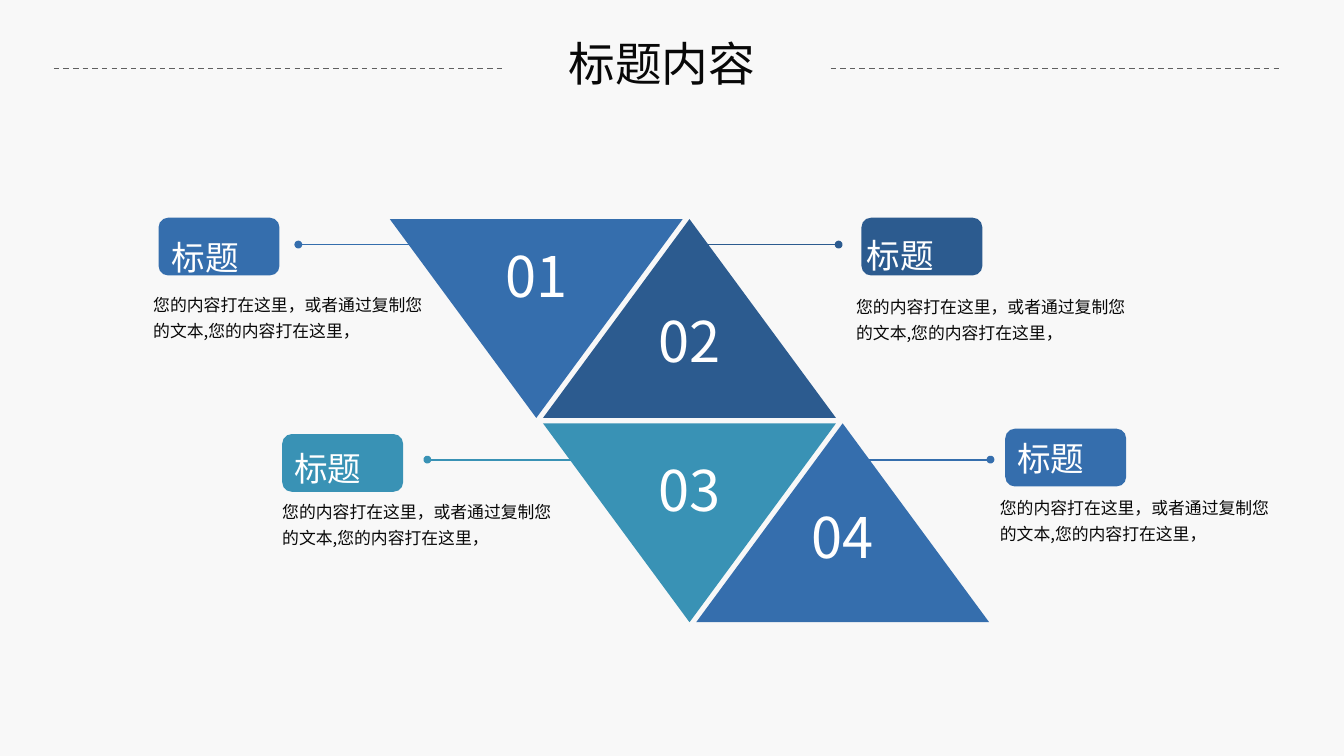
from lxml import etree
from pptx import Presentation
from pptx.dml.color import RGBColor
from pptx.enum import dml, shapes, text
from pptx.oxml.ns import qn
from pptx.util import Inches, Pt

THEME = {
    "font": "Noto Sans CJK SC",
    "background": "F8F8F8", "ink": "080808", "white": "FFFFFF", "rule": "5F5F5F",
    "blue": "356EAD", "navy": "2C5B8F", "teal": "3992B5", "dot": "0070C0",
    "title_size": 25, "number_size": 30, "heading_size": 18, "body_size": 9,
}

TITLE = "标题内容"
HEADING = "标题"
BODY = "您的内容打在这里，或者通过复制您的文本,您的内容打在这里，"
RULE_STARTS = [6.18, 0.4]

# Positions are (left, top); a leader runs from its dot to its triangle.
ITEMS = [
    {"number": "01", "color": "blue", "column": 0, "row": 0, "number_top": 1.75,
     "leader": (2.22, 3.35), "badge": (1.18, 1.62), "heading": (1.21, 1.61), "body": (1.07, 2.11)},
    {"number": "02", "color": "navy", "column": 1, "row": 0, "number_top": 2.23,
     "leader": (6.24, 5.11), "badge": (6.41, 1.62), "heading": (6.38, 1.6), "body": (6.3, 2.12)},
    {"number": "03", "color": "teal", "column": 1, "row": 1, "number_top": 3.34,
     "leader": (3.18, 4.31), "badge": (2.1, 3.23), "heading": (2.12, 3.18), "body": (2.03, 3.65)},
    {"number": "04", "color": "blue", "column": 2, "row": 1, "number_top": 3.69,
     "leader": (7.37, 6.25), "badge": (7.48, 3.19), "heading": (7.5, 3.11), "body": (7.37, 3.62)},
]

GRID_LEFT, GRID_TOP = 2.9, 1.63
COLUMN_STEP, ROW_STEP = 1.14, 1.52
TRIANGLE_WIDTH, TRIANGLE_HEIGHT = 2.18, 1.48
LEADER_TOP, LEADER_STEP = 1.82, 1.6
DOT = 0.03


def color(name):
    return RGBColor.from_string(THEME[name])


def add_text(slide, words, box, style, ink="ink", align=text.PP_ALIGN.LEFT,
             spacing=None, insets=(0.1, 0.05), wrap=True):
    shape = slide.shapes.add_textbox(*map(Inches, box))
    frame = shape.text_frame
    frame.word_wrap = wrap
    frame.auto_size = text.MSO_AUTO_SIZE.SHAPE_TO_FIT_TEXT
    frame.margin_left = frame.margin_right = Inches(insets[0])
    frame.margin_top = frame.margin_bottom = Inches(insets[1])
    paragraph = frame.paragraphs[0]
    paragraph.text = words
    paragraph.alignment = align
    paragraph.line_spacing = spacing
    font = paragraph.font
    font.size = Pt(THEME[style + "_size"])
    font.color.rgb = color(ink)
    font.name = THEME["font"]
    defaults = paragraph._p.pPr.find(qn("a:defRPr"))
    etree.SubElement(defaults, qn("a:ea"), typeface=THEME["font"])


def add_line(slide, start, end, top, ink, width):
    line = slide.shapes.add_connector(
        shapes.MSO_CONNECTOR.STRAIGHT, Inches(start), Inches(top), Inches(end), Inches(top))
    line.line.color.rgb = color(ink)
    line.line.width = Pt(width)
    etree.SubElement(line._element.spPr, qn("a:effectLst"))
    return line


def add_filled(slide, kind, box, fill):
    shape = slide.shapes.add_shape(kind, *map(Inches, box))
    shape.shadow.inherit = False
    shape.fill.solid()
    shape.fill.fore_color.rgb = color(fill)
    shape.line.fill.background()
    return shape


def add_leader(slide, item):
    start, end = item["leader"]
    top = LEADER_TOP + item["row"] * LEADER_STEP
    add_line(slide, start, end, top, item["color"], 1)
    dot = add_filled(slide, shapes.MSO_SHAPE.OVAL,
                     (start - DOT / 2, top - DOT / 2, DOT, DOT), "dot")
    dot.line.color.rgb = color(item["color"])
    dot.line.width = Pt(2)


def add_triangle(slide, item):
    left = GRID_LEFT + item["column"] * COLUMN_STEP
    top = GRID_TOP + item["row"] * ROW_STEP
    triangle = add_filled(slide, shapes.MSO_SHAPE.ISOSCELES_TRIANGLE,
                          (left, top, TRIANGLE_WIDTH, TRIANGLE_HEIGHT), item["color"])
    points_down = item["column"] == item["row"]
    triangle.rotation = 180 if points_down else 0
    width = 0.7
    add_text(slide, item["number"],
             (left + (TRIANGLE_WIDTH - width) / 2, item["number_top"], width, 0.61),
             "number", "white", text.PP_ALIGN.CENTER, wrap=False)


def add_label(slide, item):
    add_text(slide, BODY, (*item["body"], 2.18, 0.47), "body",
             spacing=1.3, insets=(0.07, 0.04))
    add_filled(slide, shapes.MSO_SHAPE.ROUNDED_RECTANGLE,
               (*item["badge"], 0.9, 0.43), item["color"])
    add_text(slide, HEADING, (*item["heading"], 0.97, 0.45), "heading", "white",
             spacing=1.5, insets=(0.07, 0))


def main():
    presentation = Presentation()
    presentation.slide_width = Inches(10)
    presentation.slide_height = presentation.slide_width * 9 // 16
    slide = presentation.slides.add_slide(presentation.slide_layouts[6])
    slide.background.fill.solid()
    slide.background.fill.fore_color.rgb = color("background")

    add_text(slide, TITLE, (4.06, 0.21, 1.73, 0.52), "title", align=text.PP_ALIGN.CENTER)
    for start in RULE_STARTS:
        rule = add_line(slide, start, start + 3.34, 0.51, "rule", 0.75)
        rule.line.dash_style = dml.MSO_LINE.DASH
    for add_part in (add_leader, add_triangle, add_label):
        for item in ITEMS:
            add_part(slide, item)
    presentation.save("out.pptx")


if __name__ == "__main__":
    main()
